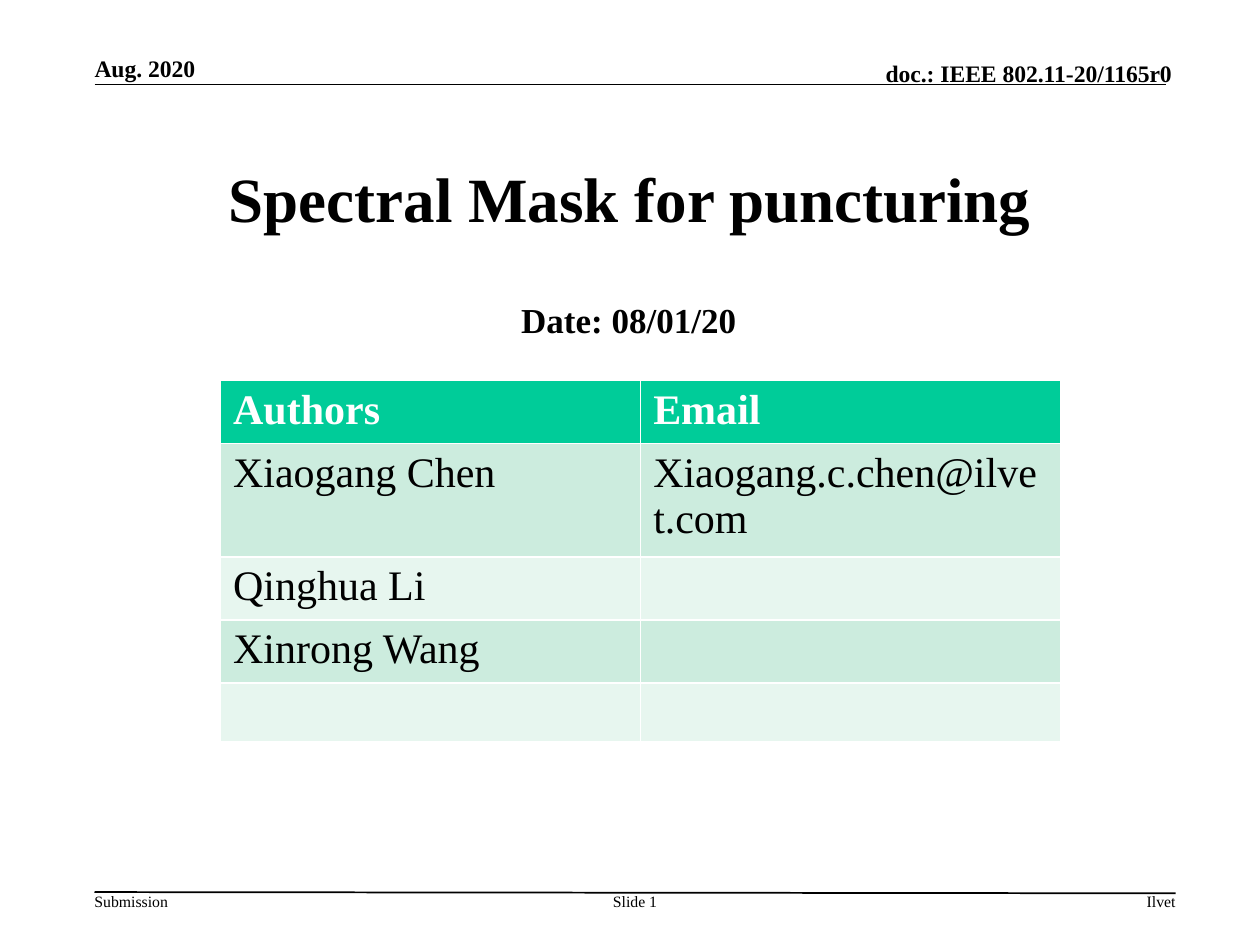
from lxml import etree
from pptx import Presentation
from pptx import util as u
from pptx.dml.color import RGBColor
from pptx.enum import shapes, text
from pptx.oxml.ns import qn

FACE = "Times New Roman"
LEFT, MID, RIGHT = text.PP_ALIGN.LEFT, text.PP_ALIGN.CENTER, text.PP_ALIGN.RIGHT
TOP, CENTER, BASE = text.MSO_ANCHOR.TOP, text.MSO_ANCHOR.MIDDLE, text.MSO_ANCHOR.BOTTOM


def paint(hue):
    return RGBColor.from_string(hue)


def style(frame, words, size, bold=False, align=LEFT, hue="000000"):
    frame.text = words
    para = frame.paragraphs[0]
    para.alignment = align
    for run in para.runs:
        run.font.name = FACE
        run.font.size = u.Pt(size)
        run.font.bold = bold
        run.font.color.rgb = paint(hue)


def label(slide, box, words, size, bold=False, align=LEFT, anchor=TOP):
    frame = slide.shapes.add_textbox(*map(u.Inches, box)).text_frame
    frame.word_wrap = True
    frame.vertical_anchor = anchor
    frame.margin_left = frame.margin_right = 0
    frame.margin_top = frame.margin_bottom = 0
    style(frame, words, size, bold, align)


def rule(slide, start, end):
    line = slide.shapes.add_connector(
        shapes.MSO_CONNECTOR.STRAIGHT, *map(u.Inches, start + end))
    line.line.color.rgb = paint("000000")
    line.line.width = u.Pt(1)
    etree.SubElement(line._element.spPr, qn("a:effectLst"))


def header(slide, box):
    left, top, width, height = box
    foot = top + height
    rule(slide, (left, foot), (left + width, foot))
    label(slide, (left, top, 2.05, 0.3), "Aug. 2020", 13.5, True, anchor=BASE)
    label(slide, (left + 4.72, top + 0.04, 3.83, 0.3),
          "doc.: IEEE 802.11-20/1165r0", 13.5, True, RIGHT, BASE)


def footer(slide, box):
    left, top, width, height = box
    rule(slide, (left, top), (left + width, top + 0.01))
    label(slide, (left, top, 1, height), "Submission", 9)
    label(slide, (left + 4, top, 0.58, height), "Slide 1", 9, align=MID)
    label(slide, (left + width - 3.48, top, 3.48, height), "Ilvet", 9, align=RIGHT)


def heading(slide, box):
    title = slide.shapes.title
    title.left, title.top, title.width, title.height = map(u.Inches, box)
    title.text_frame.vertical_anchor = CENTER
    style(title.text_frame, "Spectral Mask for puncturing", 36, True, MID)


def authors(slide, box):
    rows = [
        ("Authors", "Email"),
        ("Xiaogang Chen", "Xiaogang.c.chen@ilvet.com"),
        ("Qinghua Li", ""),
        ("Xinrong Wang", ""),
        ("", ""),
    ]
    grid = slide.shapes.add_table(len(rows), 2, *map(u.Inches, box)).table
    for r, row in enumerate(rows):
        head = r == 0
        fill = "00CC99" if head else ("E7F6EF", "CCECDE")[r % 2]
        for c, words in enumerate(row):
            cell = grid.cell(r, c)
            cell.fill.solid()
            cell.fill.fore_color.rgb = paint(fill)
            style(cell.text_frame, words, 24, head,
                  hue="FFFFFF" if head else "000000")


def main():
    deck = Presentation()
    deck.slide_width, deck.slide_height = u.Inches(10), u.Inches(7.5)
    slide = deck.slides.add_slide(deck.slide_layouts[5])
    header(slide, (0.75, 0.35, 8.5, 0.32))
    heading(slide, (0.75, 0.88, 8.5, 1.37))
    label(slide, (0.84, 2.37, 8.3, 0.4), "Date: 08/01/20", 20, True, MID)
    authors(slide, (1.75, 3.02, 6.67, 2.33))
    footer(slide, (0.75, 7.08, 8.58, 0.2))
    deck.save("out.pptx")


if __name__ == "__main__":
    main()
